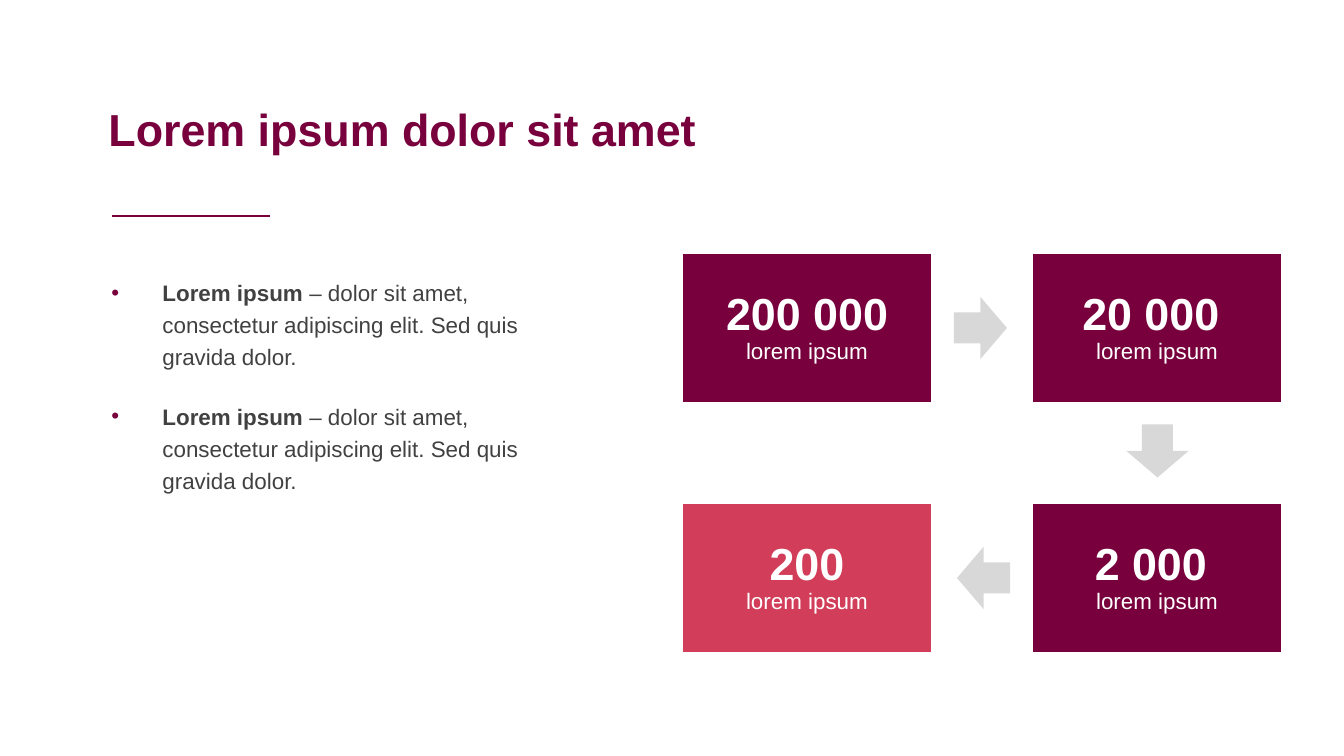
from lxml import etree
from pptx import Presentation
from pptx.dml.color import RGBColor
from pptx.enum.shapes import MSO_CONNECTOR, MSO_SHAPE
from pptx.enum.text import MSO_ANCHOR, MSO_AUTO_SIZE, PP_ALIGN
from pptx.oxml.ns import qn
from pptx.util import Pt

RECTANGLE = MSO_SHAPE.RECTANGLE
ARROW = MSO_SHAPE.RIGHT_ARROW
STRAIGHT = MSO_CONNECTOR.STRAIGHT
TOP, MIDDLE = MSO_ANCHOR.TOP, MSO_ANCHOR.MIDDLE
LEFT, CENTER = PP_ALIGN.LEFT, PP_ALIGN.CENTER
NO_FIT = MSO_AUTO_SIZE.NONE

SCALE = 914400 / 134.4
FONT = "Arial"
COLORS = {
    "wine": "78003D",
    "rule": "78013C",
    "rose": "D23D59",
    "arrow": "D7D8D7",
    "text": "414141",
    "white": "FFFFFF",
}


def px(value):
    return round(value * SCALE)


def rgb(name):
    return RGBColor.from_string(COLORS[name])


class SlideBuilder:
    """Hold the style and the current slide, and draw each kind of element."""

    def __init__(self, presentation):
        self.slide = presentation.slides.add_slide(presentation.slide_layouts[1])

    def style_run(self, run, size, color, bold):
        run.font.name = FONT
        run.font.size = Pt(size)
        run.font.bold = bold
        run.font.color.rgb = rgb(color)

    def place(self, shape, left, top, width, height):
        shape.left, shape.top = px(left), px(top)
        shape.width, shape.height = px(width), px(height)
        shape.text_frame.auto_size = NO_FIT
        shape.text_frame.vertical_anchor = TOP

    def title(self, text, *box):
        shape = self.slide.shapes.title
        self.place(shape, *box)
        shape.text_frame.text = text
        paragraph = shape.text_frame.paragraphs[0]
        paragraph.alignment = LEFT
        self.style_run(paragraph.runs[0], 24, "wine", True)

    def bullets(self, items, *box):
        shape = self.slide.placeholders[1]
        self.place(shape, *box)
        frame = shape.text_frame
        for index, (lead, rest) in enumerate(items):
            paragraph = frame.add_paragraph() if index else frame.paragraphs[0]
            properties = paragraph._p.get_or_add_pPr()
            properties.set("marL", str(px(51)))
            properties.set("indent", str(-px(51)))
            bullet_color = etree.SubElement(properties, qn("a:buClr"))
            etree.SubElement(bullet_color, qn("a:srgbClr"), val=COLORS["wine"])
            etree.SubElement(properties, qn("a:buChar"), char="•")
            paragraph.line_spacing = 1.2
            paragraph.space_before = Pt(14.5 if index else 0)
            for text, bold in ((lead, True), (rest, False)):
                run = paragraph.add_run()
                run.text = text
                self.style_run(run, 12, "text", bold)

    def shape(self, kind, color, left, top, width, height):
        shape = self.slide.shapes.add_shape(kind, px(left), px(top), px(width), px(height))
        shape.shadow.inherit = False
        shape.fill.solid()
        shape.fill.fore_color.rgb = rgb(color)
        shape.line.fill.background()
        return shape

    def card(self, number, label, color, *box):
        shape = self.shape(RECTANGLE, color, *box)
        shape.line.color.rgb = rgb("white")
        shape.line.width = Pt(1)
        frame = shape.text_frame
        frame.word_wrap = True
        frame.vertical_anchor = MIDDLE
        frame.text = f"{number}\v{label}"
        paragraph = frame.paragraphs[0]
        paragraph.alignment = CENTER
        paragraph.line_spacing = 0.9
        number_run, label_run = paragraph.runs
        self.style_run(number_run, 24, "white", True)
        self.style_run(label_run, 12, "white", False)

    def arrow(self, left, top, rotation):
        self.shape(ARROW, "arrow", left, top, 53, 62).rotation = rotation

    def rule(self, left, right, y):
        line = self.slide.shapes.add_connector(STRAIGHT, px(left), px(y), px(right), px(y))
        line.line.color.rgb = rgb("rule")
        line.line.width = Pt(1.5)
        etree.SubElement(line._element.spPr, qn("a:effectLst"))


def main():
    presentation = Presentation()
    presentation.slide_width = px(1344)
    presentation.slide_height = px(756)
    builder = SlideBuilder(presentation)

    builder.title("Lorem ipsum dolor sit amet", 95, 95, 626, 67)
    builder.rule(112, 270, 216)
    item = (
        "Lorem ipsum ",
        "– dolor sit amet, consectetur adipiscing elit. Sed quis gravida dolor.",
    )
    builder.bullets([item] * 2, 98, 267, 485, 239)

    columns, rows = (682, 1032), (253, 503)
    cards = [
        ("200 000", "wine", 0, 0),
        ("20 000 ", "wine", 1, 0),
        ("2 000 ", "wine", 1, 1),
        ("200", "rose", 0, 1),
    ]
    for number, color, column, row in cards:
        builder.card(number, "lorem ipsum", color, columns[column], rows[row], 250, 150)
    for left, top, rotation in ((954, 297, 0), (1131, 420, 90), (957, 547, 180)):
        builder.arrow(left, top, rotation)

    presentation.save("out.pptx")


if __name__ == "__main__":
    main()
